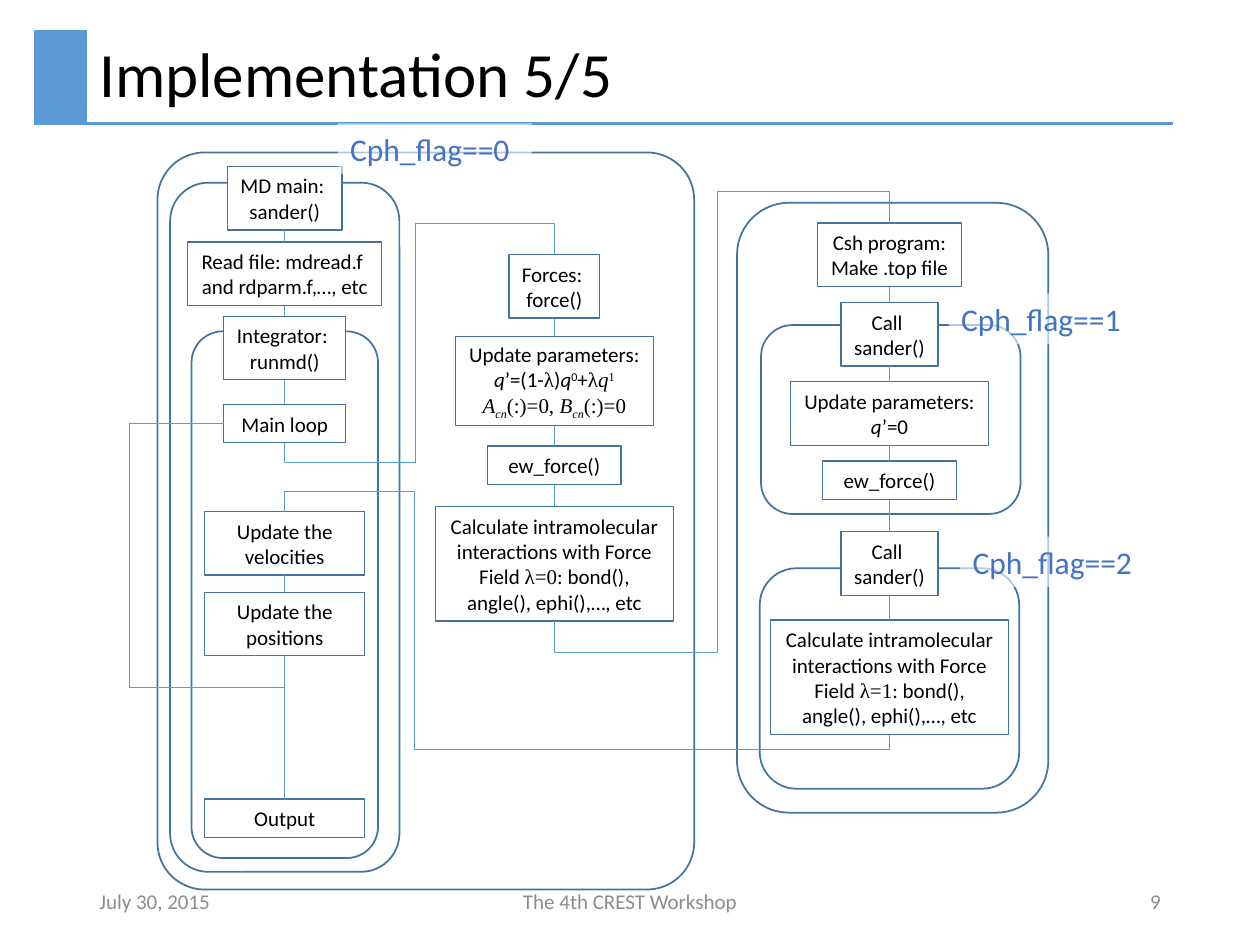
from collections import namedtuple

from lxml import etree
from pptx import Presentation
from pptx.dml.color import RGBColor
from pptx.enum.shapes import MSO_CONNECTOR, MSO_SHAPE
from pptx.enum.text import MSO_ANCHOR, MSO_AUTO_SIZE, PP_ALIGN
from pptx.oxml.ns import qn
from pptx.util import Inches, Pt

RECT, ROUNDED = MSO_SHAPE.RECTANGLE, MSO_SHAPE.ROUNDED_RECTANGLE
STRAIGHT, ELBOW = MSO_CONNECTOR.STRAIGHT, MSO_CONNECTOR.ELBOW
LEFT, CENTER, RIGHT = PP_ALIGN.LEFT, PP_ALIGN.CENTER, PP_ALIGN.RIGHT
MIDDLE = MSO_ANCHOR.MIDDLE
GROW = MSO_AUTO_SIZE.SHAPE_TO_FIT_TEXT

BLACK = RGBColor(0x00, 0x00, 0x00)
WHITE = RGBColor(0xFF, 0xFF, 0xFF)
GREY = RGBColor(0x8C, 0x8C, 0x8C)
BLUE = RGBColor(0x5B, 0x9B, 0xD5)
OUTLINE = RGBColor(0x43, 0x73, 0x9E)
FLAG_BLUE = RGBColor(0x44, 0x72, 0xC4)
SANS, SERIF = "Calibri", "Times New Roman"

# The slide is a grid of 100 columns by 75 rows
SLIDE_W, SLIDE_H = Inches(10), Inches(7.5)
COL, ROW = SLIDE_W / 100, SLIDE_H / 75
Box = namedtuple("Box", "x y w h")

# Connection sites of a rectangle, and box heights by number of text lines
TOP, WEST, BOTTOM = 0, 1, 2
HEIGHT = {1: 3.05, 2: 5.05, 3: 7.1, 4: 9.1}


def within(panel, x, y, w, h):
    return Box(panel.x + x, panel.y + y, w, h)


def emu(box):
    return (round(box.x * COL), round(box.y * ROW),
            round(box.w * COL), round(box.h * ROW))


def write(frame, paragraphs, size, color, align, wrap=True):
    """A paragraph is a string or a list of (text, font, mark) runs."""
    frame.word_wrap = wrap
    frame.vertical_anchor = MIDDLE
    for index, content in enumerate(paragraphs):
        paragraph = frame.paragraphs[0] if index == 0 else frame.add_paragraph()
        paragraph.alignment = align
        runs = [(content, SANS, "")] if isinstance(content, str) else content
        for text, font, mark in runs:
            run = paragraph.add_run()
            run.text = text
            run.font.name, run.font.size = font, Pt(size)
            run.font.color.rgb = color
            run.font.italic = "i" in mark
            if "^" in mark or "_" in mark:
                run.font._element.set("baseline", "30000" if "^" in mark else "-25000")


def add_block(slide, kind, box, fill=None, line=None, width=1):
    block = slide.shapes.add_shape(kind, *emu(box))
    block.shadow.inherit = False
    if fill is None:
        block.fill.background()
    else:
        block.fill.solid()
        block.fill.fore_color.rgb = fill
    if line is None:
        block.line.fill.background()
    else:
        block.line.color.rgb = line
        block.line.width = Pt(width)
    return block


def style_line(connector, width):
    connector.line.color.rgb = BLUE
    connector.line.width = Pt(width)
    etree.SubElement(connector._element.spPr, qn("a:effectLst"))


def add_frame(slide, box, rounding=0.167):
    add_block(slide, ROUNDED, box, line=OUTLINE).adjustments[0] = rounding


def add_steps(slide, panel, center, steps):
    """Boxes on one centre line, each given as (top, width, lines, paragraphs)."""
    blocks = []
    for top, width, lines, paragraphs in steps:
        box = within(panel, center - width / 2, top, width, HEIGHT[lines])
        block = add_block(slide, RECT, box, WHITE, OUTLINE, 0.75)
        write(block.text_frame, paragraphs, 12, BLACK, CENTER, len(paragraphs) == 1)
        block.text_frame.auto_size = GROW
        blocks.append(block)
    return blocks


def link(slide, upper, lower):
    connector = slide.shapes.add_connector(STRAIGHT, 0, 0, 0, 0)
    connector.begin_connect(upper, BOTTOM)
    connector.end_connect(lower, TOP)
    style_line(connector, 0.5)


def route(slide, source, source_site, target, target_site, bends):
    """Elbow leaving vertically; bends are its row, column and row in turn."""
    connector = slide.shapes.add_connector(ELBOW, 0, 0, 0, 0)
    connector.begin_connect(source, source_site)
    connector.end_connect(target, target_site)
    x0, y0 = connector.begin_x, connector.begin_y
    dx, dy = connector.end_x - x0, connector.end_y - y0

    # A quarter turn makes the first leg vertical
    width, height = abs(dy), abs(dx)
    connector.left = round(x0 + dx / 2 - width / 2)
    connector.top = round(y0 + dy / 2 - height / 2)
    connector.width, connector.height = width, height
    properties = connector._element.spPr
    transform = properties.find(qn("a:xfrm"))
    transform.set("rot", "5400000")
    transform.set("flipH", "1" if dy < 0 else "0")
    transform.set("flipV", "1" if dx > 0 else "0")

    geometry = properties.find(qn("a:prstGeom"))
    geometry.set("prst", f"bentConnector{len(bends) + 2}")
    guides = geometry.find(qn("a:avLst"))
    for index, bend in enumerate(bends):
        share = (bend * COL - x0) / dx if index % 2 else (bend * ROW - y0) / dy
        etree.SubElement(guides, qn("a:gd"), name=f"adj{index + 1}",
                         fmla=f"val {round(share * 100000)}")
    style_line(connector, 0.5)


def add_flag(slide, box, number):
    flag = add_block(slide, RECT, box, WHITE)
    color = flag.fill._xPr.find(qn("a:solidFill"))[0]
    etree.SubElement(color, qn("a:alpha"), val="60000")
    write(flag.text_frame, [f"Cph_flag=={number}"], 18, FLAG_BLUE, LEFT, False)
    flag.text_frame.auto_size = GROW


def add_caption(slide, box, text, size, color, align):
    frame = slide.shapes.add_textbox(*emu(box)).text_frame
    write(frame, [text], size, color, align)
    return frame


def add_header(slide, box):
    marker = 4.2
    title = within(box, marker, 0, box.w - marker, box.h)
    frame = add_caption(slide, title, "Implementation 5/5", 36, BLACK, LEFT)
    frame.paragraphs[0].line_spacing = 0.9
    add_block(slide, RECT, box._replace(w=marker), BLUE)
    left, top, width, height = emu(box)
    base = top + height
    style_line(slide.shapes.add_connector(STRAIGHT, left, base, left + width, base), 2)


def add_footer(slide, box):
    for x, width, text, align in ((0, 22.5, "July 30, 2015", LEFT),
                                  (26.2, 33.8, "The 4th CREST Workshop", CENTER),
                                  (63.7, 22.5, "9", RIGHT)):
        add_caption(slide, within(box, x, 0, width, box.h), text, 12, GREY, align)


def intramolecular(state):
    return [[("Calculate intramolecular interactions with Force Field ", SANS, ""),
             (f"λ={state}", SERIF, ""),
             (": bond(), angle(), ephi(),…, etc", SANS, "")]]


def add_dynamics(slide, panel):
    """Main program with its integrator, and the force routine beside it."""
    add_frame(slide, panel, 0.088)
    add_frame(slide, within(panel, 1, 2.4, 18.2, 54.7))
    add_frame(slide, within(panel, 2.7, 14.2, 14.8, 41.8))
    charges = [("q", SANS, "i"), ("’=(1-", SANS, ""), ("λ", SERIF, ""),
               (")", SANS, ""), ("q", SANS, "i"), ("0", SANS, "^"),
               ("+", SANS, ""), ("λ", SERIF, ""), ("q", SERIF, "i"),
               ("1", SERIF, "^")]
    coefficients = [("A", SERIF, "i"), ("cn", SERIF, "i_"), ("(:)=0, ", SERIF, ""),
                    ("B", SERIF, "i"), ("cn", SERIF, "i_"), ("(:)=0", SERIF, "")]
    main = add_steps(slide, panel, 10.1, [
        (1.1, 9.1, 2, ["MD main: ", "sander()"]),
        (7.1, 15.4, 2, ["Read file: mdread.f ", "and rdparm.f,…, etc"]),
        (13, 9.7, 2, ["Integrator: ", "runmd()"]),
        (20, 9.7, 1, ["Main loop"]),
        (28.5, 12.7, 2, ["Update the velocities"]),
        (34.9, 12.7, 2, ["Update the positions"]),
        (51.3, 12.7, 1, ["Output"])])
    forces = add_steps(slide, panel, 31.5, [
        (8.1, 7.2, 2, ["Forces: ", "force()"]),
        (14.6, 15.7, 3, ["Update parameters:", charges, coefficients]),
        (23.3, 10.6, 1, ["ew_force()"]),
        (28.1, 18.9, 4, intramolecular(0))])
    for chain in (main[:4], main[4:], forces):
        for upper, lower in zip(chain, chain[1:]):
            link(slide, upper, lower)
    return main, forces


def add_script(slide, panel):
    """Shell program that calls the main program twice."""
    add_frame(slide, panel)
    add_frame(slide, within(panel, 1.9, 9.7, 20.6, 15))
    add_frame(slide, within(panel, 1.8, 29, 20.6, 17.5))
    steps = add_steps(slide, panel, 12.1, [
        (1.6, 11.4, 2, ["Csh program:", "Make .top file"]),
        (7.9, 7.7, 2, ["Call ", "sander()"]),
        (14.2, 15.7, 2, ["Update parameters:", [("q", SANS, "i"), ("’=0", SANS, "")]]),
        (20.5, 10.6, 1, ["ew_force()"]),
        (26.1, 7.7, 2, ["Call ", "sander()"]),
        (33.1, 18.9, 4, intramolecular(1))])
    for upper, lower in zip(steps, steps[1:]):
        link(slide, upper, lower)
    return steps


def main():
    deck = Presentation()
    deck.slide_width, deck.slide_height = SLIDE_W, SLIDE_H
    slide = deck.slides.add_slide(deck.slide_layouts[6])
    add_header(slide, Box(2.7, 2.4, 90.4, 7.4))
    add_footer(slide, Box(6.9, 69.5, 86.2, 4))
    program, forces = add_dynamics(slide, Box(12.5, 12.1, 42.6, 58.5))
    script = add_script(slide, Box(58.5, 16.1, 24.7, 48.4))

    # Flow between the columns, and the loop back
    loop, velocities, positions = program[3:6]
    route(slide, loop, BOTTOM, forces[0], TOP, (36.7, 33, 17.7))
    route(slide, script[0], TOP, forces[-1], BOTTOM, (15.2, 56.9, 51.8))
    route(slide, script[-1], BOTTOM, velocities, TOP, (59.5, 32.9, 39))
    route(slide, positions, BOTTOM, loop, WEST, (54.6, 10.3))

    # Flag that each frame runs under
    for number, (x, y, width) in enumerate(((26.8, 9.8, 15.4), (75.3, 23.3, 14.9),
                                            (76.2, 42.6, 14.9))):
        add_flag(slide, Box(x, y, width, 4), number)
    deck.save("out.pptx")


if __name__ == "__main__":
    main()
